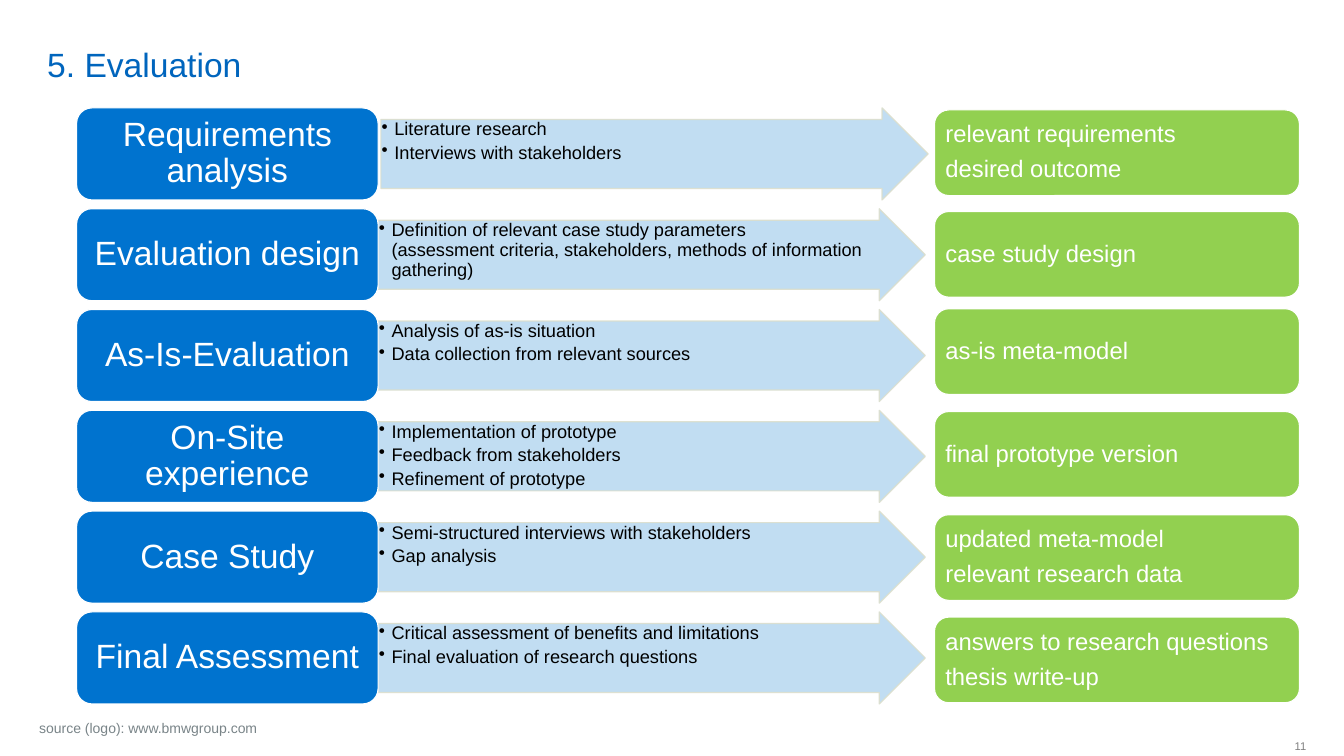
from lxml.etree import SubElement
from pptx import Presentation
from pptx.dml.color import RGBColor
from pptx.enum.shapes import MSO_SHAPE as Shape
from pptx.enum.text import MSO_ANCHOR as Anchor, MSO_AUTO_SIZE as Fit, PP_ALIGN as Align
from pptx.oxml.ns import qn
from pptx.util import Cm, Pt

TITLE = RGBColor(0x00, 0x65, 0xBD)
BLUE = RGBColor(0x00, 0x73, 0xCF)
PALE = RGBColor(0xC1, 0xDD, 0xF2)
EDGE = RGBColor(0xDC, 0xDF, 0xCD)
GREEN = RGBColor(0x92, 0xD0, 0x50)
WHITE = RGBColor(0xFF, 0xFF, 0xFF)
BLACK = RGBColor(0x00, 0x00, 0x00)
GREY = RGBColor(0x80, 0x80, 0x80)
SLATE = RGBColor(0x79, 0x84, 0x88)

TOP, PITCH = 2.72, 2.54

# Phase, tasks, results, left of the arrow, top of the result box
PHASES = [
    ("Requirements analysis",
     ["Literature research", "Interviews with stakeholders"],
     ["relevant requirements", "desired outcome"], 9.6, 2.77),
    ("Evaluation design",
     ["Definition of relevant case study parameters\n"
      "(assessment criteria, stakeholders, methods of information gathering)"],
     ["case study design"], 9.53, 5.33),
    ("As-Is-Evaluation",
     ["Analysis of as-is situation", "Data collection from relevant sources"],
     ["as-is meta-model"], 9.53, 7.78),
    ("On-Site experience",
     ["Implementation of prototype", "Feedback from stakeholders",
      "Refinement of prototype"],
     ["final prototype version"], 9.53, 10.37),
    ("Case Study",
     ["Semi-structured interviews with stakeholders", "Gap analysis"],
     ["updated meta-model", "relevant research data"], 9.53, 12.97),
    ("Final Assessment",
     ["Critical assessment of benefits and limitations",
      "Final evaluation of research questions"],
     ["answers to research questions", "thesis write-up"], 9.53, 15.55),
]


def set_frame(frame, anchor, side, edge, wrap=True):
    frame.auto_size = Fit.NONE
    frame.word_wrap = wrap
    frame.vertical_anchor = anchor
    frame.margin_left = frame.margin_right = Cm(side)
    frame.margin_top = frame.margin_bottom = Cm(edge)


def write(frame, texts, size, color, align=Align.LEFT, line=None, gap=0):
    for i, text in enumerate(texts):
        para = frame.add_paragraph() if i else frame.paragraphs[0]
        para.alignment = align
        if line:
            para.line_spacing = line
        if i:
            para.space_before = Pt(gap)
        for j, part in enumerate(text.split("\n")):
            if j:
                para.add_line_break()
            run = para.add_run()
            run.text = part
            run.font.name = "Arial"
            run.font.size = Pt(size)
            run.font.color.rgb = color


def add_block(slide, kind, box, fill, edge):
    block = slide.shapes.add_shape(kind, *map(Cm, box))
    block.shadow.inherit = False
    block.fill.solid()
    block.fill.fore_color.rgb = fill
    block.line.color.rgb = edge
    block.line.width = Pt(0.85)
    return block


def add_phase(slide, box, name):
    frame = add_block(slide, Shape.ROUNDED_RECTANGLE, box, BLUE, WHITE).text_frame
    set_frame(frame, Anchor.MIDDLE, 0.2, 0.1)
    write(frame, [name], 24, WHITE, Align.CENTER, 0.9)


def add_tasks(slide, box, tasks):
    arrow = add_block(slide, Shape.RIGHT_ARROW, box, PALE, EDGE)
    arrow.adjustments[0], arrow.adjustments[1] = 0.75, 0.5
    # Slightly transparent outline
    tint = arrow.line._ln.find(".//" + qn("a:srgbClr"))
    SubElement(tint, qn("a:alpha"), val="90000")
    frame = arrow.text_frame
    set_frame(frame, Anchor.TOP, 0.02, 0.02)
    write(frame, tasks, 13, BLACK, line=0.9, gap=2.6)
    # Hanging bullets
    for para in frame.paragraphs:
        props = para._p.get_or_add_pPr()
        props.set("marL", str(Cm(0.32)))
        props.set("indent", str(Cm(-0.32)))
        SubElement(props, qn("a:buChar"), char="•")


def add_result(slide, box, results):
    frame = add_block(slide, Shape.ROUNDED_RECTANGLE, box, GREEN, WHITE).text_frame
    set_frame(frame, Anchor.MIDDLE, 0.17, 0.17)
    write(frame, results, 17, WHITE, line=0.9, gap=6.6)


def add_title(slide, box, text):
    title = slide.shapes.title
    title.left, title.top, title.width, title.height = map(Cm, box)
    set_frame(title.text_frame, Anchor.BOTTOM, 0.25, 0)
    write(title.text_frame, [text], 24, TITLE)


def add_note(slide, box, text, size, color, anchor=Anchor.TOP,
             align=Align.LEFT, side=0.25):
    frame = slide.shapes.add_textbox(*map(Cm, box)).text_frame
    set_frame(frame, anchor, side, 0.13)
    write(frame, [text], size, color, align)


def main():
    deck = Presentation()
    deck.slide_width, deck.slide_height = Cm(33.87), Cm(19.05)
    slide = deck.slides.add_slide(deck.slide_layouts[5])

    add_title(slide, (0.94, 0.13, 29.41, 2), "5. Evaluation")

    # One row per phase
    for i, (name, tasks, results, left, top) in enumerate(PHASES):
        row = TOP + i * PITCH
        add_tasks(slide, (left, row, 13.79, 2.32), tasks)
        add_phase(slide, (1.93, row, 7.6, 2.32), name)
        add_result(slide, (23.55, top, 9.2, 2.16), results)

    # Footer
    add_note(slide, (0.74, 18.01, 22.05, 0.69),
             "source (logo): www.bmwgroup.com", 10, SLATE)
    add_note(slide, (32, 18.39, 0.92, 0.81), "11", 8, GREY,
             Anchor.MIDDLE, Align.RIGHT, 0)

    deck.save("out.pptx")


if __name__ == "__main__":
    main()
